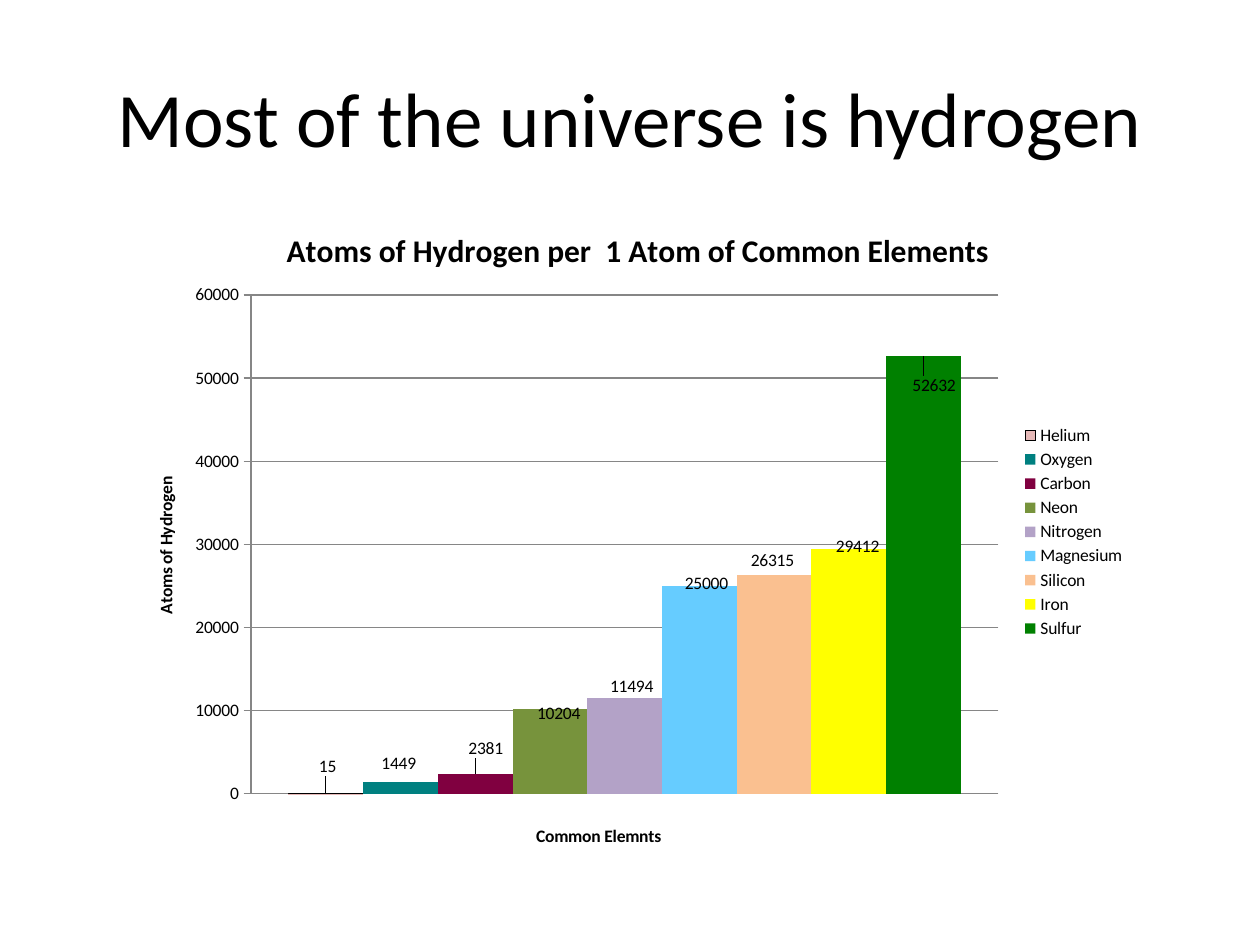
"""Builds a slide with a column chart of hydrogen abundance."""
import pptx
import pptx.chart.data
import pptx.dml.color
import pptx.enum.chart
import pptx.enum.text
import pptx.oxml
import pptx.oxml.ns
import pptx.util

Pt = pptx.util.Pt
RGBColor = pptx.dml.color.RGBColor

BLACK = RGBColor(0x00, 0x00, 0x00)
GRID_GRAY = RGBColor(0x86, 0x86, 0x86)
PINK = RGBColor(0xE6, 0xB9, 0xB8)
TEAL = RGBColor(0x00, 0x80, 0x80)
MAROON = RGBColor(0x80, 0x00, 0x40)
OLIVE = RGBColor(0x77, 0x93, 0x3C)
LILAC = RGBColor(0xB3, 0xA2, 0xC7)
SKY = RGBColor(0x66, 0xCC, 0xFF)
PEACH = RGBColor(0xFA, 0xC0, 0x90)
YELLOW = RGBColor(0xFF, 0xFF, 0x00)
GREEN = RGBColor(0x00, 0x80, 0x00)

FONT = "Calibri"
CHART_WIDTH, CHART_HEIGHT = 580, 385

ELEMENTS = [
    ("Helium", 15, PINK, (1, -7)),
    ("Oxygen", 1449, TEAL, (-1, -2)),
    ("Carbon", 2381, MAROON, (6, -6)),
    ("Neon", 10204, OLIVE, (5, 11)),
    ("Nitrogen", 11494, LILAC, (4, 2)),
    ("Magnesium", 25000, SKY, (4, 7)),
    ("Silicon", 26315, PEACH, (-1, 0)),
    ("Iron", 29412, YELLOW, (5, 7)),
    ("Sulfur", 52632, GREEN, (6, 25)),
]


def style_font(font, size, bold=False, color=BLACK):
    """Apply the typeface, size, weight and colour to a font."""
    font.name = FONT
    font.size = Pt(size)
    font.bold = bold
    font.color.rgb = color


def write_text(frame, text, size, bold=False, align=pptx.enum.text.PP_ALIGN.CENTER):
    """Write one formatted paragraph into a text frame."""
    paragraph = frame.paragraphs[0]
    paragraph.alignment = align
    run = paragraph.add_run()
    run.text = text
    style_font(run.font, size, bold)


def place(part, index, x, y, size=None, absolute=True, inner=False):
    """Give a chart part a manual layout, in points within the chart."""
    for old in part.findall(pptx.oxml.ns.qn("c:layout")):
        part.remove(old)
    entries = [("layoutTarget", "inner")] if inner else []
    if absolute:
        entries += [("xMode", "edge"), ("yMode", "edge")]
    entries += [("x", x / CHART_WIDTH), ("y", y / CHART_HEIGHT)]
    if size:
        entries += [("w", size[0] / CHART_WIDTH), ("h", size[1] / CHART_HEIGHT)]
    body = "".join(f'<c:{tag} val="{value}"/>' for tag, value in entries)
    layout = pptx.oxml.parse_xml(
        f'<c:layout {pptx.oxml.ns.nsdecls("c")}>'
        f"<c:manualLayout>{body}</c:manualLayout></c:layout>"
    )
    part.insert(index, layout)


def add_heading(slide, text):
    """Add the slide heading."""
    heading = slide.shapes.add_textbox(Pt(36), Pt(21.6), Pt(648), Pt(90))
    frame = heading.text_frame
    frame.word_wrap = True
    frame.vertical_anchor = pptx.enum.text.MSO_ANCHOR.MIDDLE
    write_text(frame, text, 44)


def add_chart_title(title, text, size, x, y, rotation=0):
    """Fill and place the title of the chart or of an axis."""
    frame = title.text_frame
    write_text(frame, text, size, bold=True)
    frame._txBody.bodyPr.set("rot", str(rotation * 60000))
    place(title._element, 1, x, y)


def style_series(series, color, label_offset):
    """Colour a series and position its value label."""
    series.format.fill.solid()
    series.format.fill.fore_color.rgb = color
    series.invert_if_negative = False
    labels = series.data_labels
    labels.show_value = True
    labels.number_format = "0"
    labels.number_format_is_linked = False
    style_font(labels.font, 10)
    label = series.points[0].data_label
    style_font(label.font, 10)
    label.position = pptx.enum.chart.XL_LABEL_POSITION.OUTSIDE_END
    entry = labels._element.find(pptx.oxml.ns.qn("c:dLbl"))
    place(entry, 1, *label_offset, absolute=False)


def style_axes(chart):
    """Format both axes and their titles."""
    elements_axis, atoms_axis = chart.category_axis, chart.value_axis
    elements_axis.visible = False
    add_chart_title(elements_axis.axis_title, "Common Elemnts", 10, 234, 358)
    atoms_axis.minimum_scale, atoms_axis.maximum_scale = 0, 60000
    atoms_axis.major_unit = 10000
    atoms_axis.major_tick_mark = pptx.enum.chart.XL_TICK_MARK.CROSS
    for line in (atoms_axis.format.line, atoms_axis.major_gridlines.format.line):
        line.color.rgb = GRID_GRAY
        line.width = Pt(0.75)
    style_font(atoms_axis.tick_labels.font, 10)
    add_chart_title(atoms_axis.axis_title, "Atoms of Hydrogen", 10, 16, 159, rotation=-90)


def add_element_chart(slide):
    """Add the chart comparing hydrogen with the common elements."""
    data = pptx.chart.data.CategoryChartData(number_format="0")
    data.categories = ["1"]
    for name, atoms, _, _ in ELEMENTS:
        data.add_series(name, [atoms])
    chart = slide.shapes.add_chart(
        pptx.enum.chart.XL_CHART_TYPE.COLUMN_CLUSTERED,
        Pt(70.5), Pt(111.6), Pt(CHART_WIDTH), Pt(CHART_HEIGHT), data,
    ).chart
    style_font(chart.font, 10)
    chart.has_title = True
    add_chart_title(
        chart.chart_title, " Atoms of Hydrogen per  1 Atom of Common Elements", 18, 86, 16
    )
    plot = chart.plots[0]
    plot.gap_width = 100
    plot.vary_by_categories = False
    for series, (_, _, color, label_offset) in zip(plot.series, ELEMENTS):
        style_series(series, color, label_offset)
    helium_line = plot.series[0].format.line
    helium_line.color.rgb = BLACK
    helium_line.width = Pt(0.75)
    style_axes(chart)
    plot_area = chart._chartSpace.chart.plotArea
    place(plot_area, 0, 73, 57, size=(427, 285), inner=True)
    chart.has_legend = True
    chart.legend.position = pptx.enum.chart.XL_LEGEND_POSITION.RIGHT
    chart.legend.include_in_layout = False
    style_font(chart.legend.font, 10)
    place(chart.legend._element, 1, 511, 129, size=(64, 127))


def main():
    """Build and save the presentation."""
    deck = pptx.Presentation()
    deck.slide_width, deck.slide_height = Pt(720), Pt(540)
    slide = deck.slides.add_slide(deck.slide_layouts[6])
    add_heading(slide, "Most of the universe is hydrogen")
    add_element_chart(slide)
    deck.save("out.pptx")


if __name__ == "__main__":
    main()
